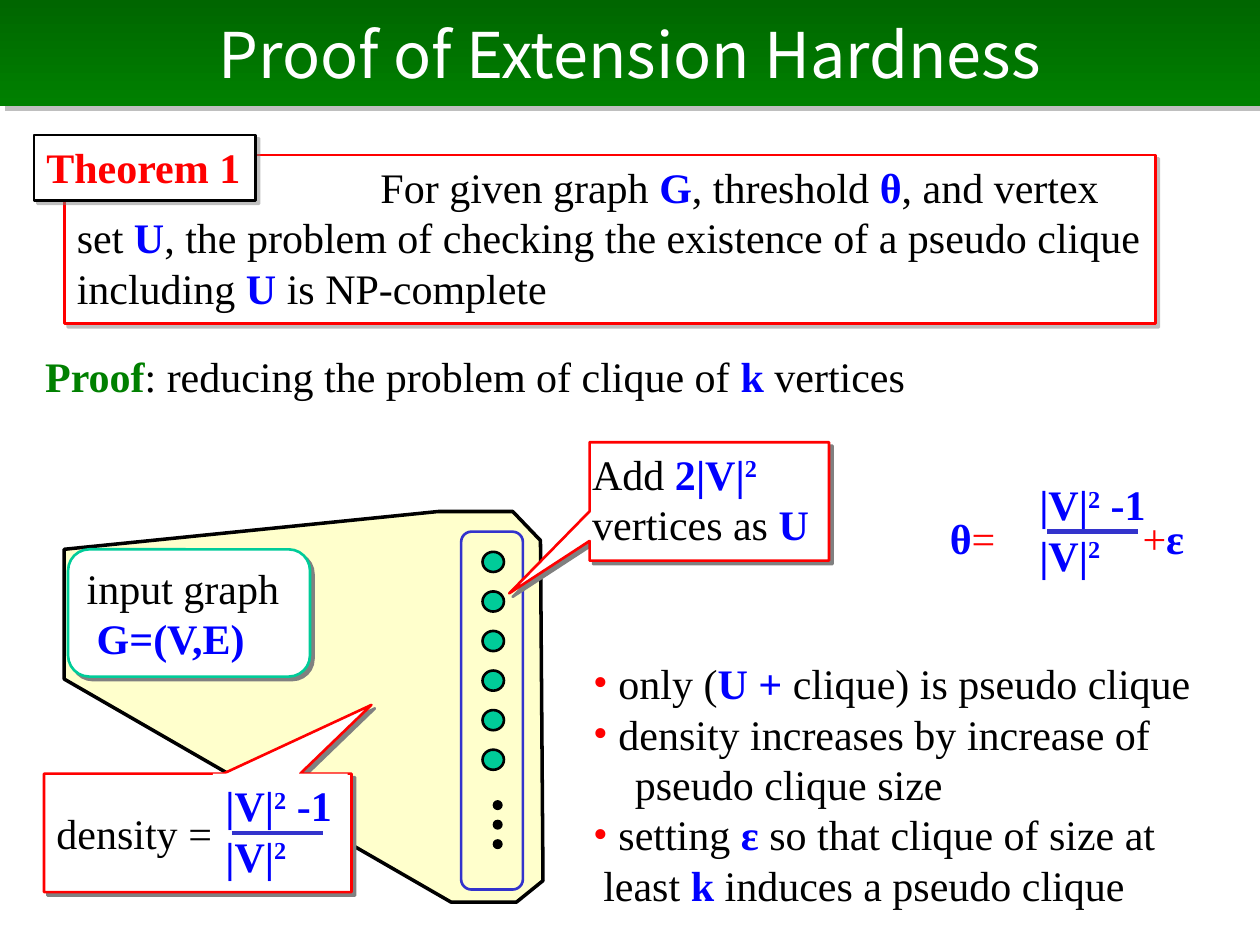
from lxml import etree
from pptx import Presentation
from pptx.dml.color import RGBColor
from pptx.enum import shapes, text
from pptx.oxml.ns import qn
from pptx.util import Inches, Pt

COLORS = {
    "white": "FFFFFF", "black": "000000", "red": "FF0000", "blue": "0000FF",
    "green": "008000", "dark green": "006600", "teal": "00CC99",
    "indigo": "3333CC", "yellow": "FFFF00", "gray": "808080",
}
# style name: colour, bold, superscript
STYLES = {
    "plain": ("black", False, False), "math": ("blue", True, False),
    "power": ("blue", True, True), "theorem": ("red", True, False),
    "sign": ("red", False, False), "proof": ("green", True, False),
}
SHAPE = shapes.MSO_SHAPE
TOP, MIDDLE = text.MSO_ANCHOR.TOP, text.MSO_ANCHOR.MIDDLE
FRACTION = [[("|V|", "math"), ("2", "power"), (" -1", "math")],
            [("|V|", "math"), ("2", "power")]]


def rgb(name):
    return RGBColor.from_string(COLORS[name])


def place(sp, box):
    sp.left, sp.top, sp.width, sp.height = (Inches(v) for v in box)


def add_shadow(sp, alpha, distance):
    effects = sp._element.spPr.find(qn("a:effectLst"))
    shadow = etree.SubElement(effects, qn("a:outerShdw"), blurRad="0",
                              dist=str(Pt(distance)), dir="2700000",
                              algn="ctr", rotWithShape="0")
    color = etree.SubElement(shadow, qn("a:srgbClr"), val=COLORS["gray"])
    etree.SubElement(color, qn("a:alpha"), val=str(alpha * 1000))


def paint(sp, fill=None, line=None, width=1.5, shadow=None):
    """Set fill, outline and shadow; shadow is the opacity in percent."""
    if fill:
        sp.fill.solid()
        sp.fill.fore_color.rgb = rgb(fill)
    else:
        sp.fill.background()
    if line:
        sp.line.color.rgb = rgb(line)
        sp.line.width = Pt(width)
    else:
        sp.line.fill.background()
    sp.shadow.inherit = False
    if shadow:
        add_shadow(sp, shadow, 2.8)


def add_box(s, kind, box, adjust=(), **look):
    sp = s.shapes.add_shape(kind, *(Inches(v) for v in box))
    for i, value in enumerate(adjust):
        sp.adjustments[i] = value
    paint(sp, **look)
    return sp


def write(sp, paragraphs, anchor=TOP, inset=0.1):
    """Fill a shape with paragraphs, each a list of (text, style) runs."""
    tf = sp.text_frame
    tf.word_wrap = True
    tf.auto_size = text.MSO_AUTO_SIZE.NONE
    tf.vertical_anchor = anchor
    tf.margin_left = tf.margin_right = Inches(inset)
    for i, runs in enumerate(paragraphs):
        p = tf.paragraphs[0] if i == 0 else tf.add_paragraph()
        p.alignment = text.PP_ALIGN.LEFT
        p.space_before = Pt(0)
        for words, style in runs:
            color, bold, raised = STYLES[style]
            r = p.add_run()
            r.text = words
            r.font.name = "Times New Roman"
            r.font.size = Pt(24)
            r.font.bold = bold
            r.font.color.rgb = rgb(color)
            if raised:
                r._r.get_or_add_rPr().set("baseline", "30000")
    return tf.paragraphs


def add_text(s, box, paragraphs):
    return write(s.shapes.add_textbox(*(Inches(v) for v in box)), paragraphs)


def indent(p, margin, first=0):
    pPr = p._p.get_or_add_pPr()
    pPr.set("marL", str(Inches(margin)))
    pPr.set("indent", str(Inches(first)))
    return pPr


def add_bullet(p):
    pPr = indent(p, 0.2, -0.2)
    color = etree.SubElement(pPr, qn("a:buClr"))
    etree.SubElement(color, qn("a:srgbClr"), val=COLORS["red"])
    etree.SubElement(pPr, qn("a:buFont"), typeface="Times New Roman")
    etree.SubElement(pPr, qn("a:buChar"), char="•")


def add_rule(s, x, y, length):
    line = s.shapes.add_connector(shapes.MSO_CONNECTOR.STRAIGHT, Inches(x),
                                  Inches(y), Inches(x + length), Inches(y))
    line.line.color.rgb = rgb("indigo")
    line.line.width = Pt(2.5)
    etree.SubElement(line._element.spPr, qn("a:effectLst"))


def add_title(s):
    sp = s.shapes.title
    place(sp, (0, 0, 10, 0.84))
    sp.fill.gradient()
    sp.fill.gradient_angle = 270
    for stop, color in zip(sp.fill.gradient_stops, ("dark green", "green")):
        stop.color.rgb = rgb(color)
    sp.shadow.inherit = False
    add_shadow(sp, 50, 4.2)
    tf = sp.text_frame
    tf.text = "Proof of Extension Hardness"
    tf.vertical_anchor = MIDDLE
    p = tf.paragraphs[0]
    p.alignment = text.PP_ALIGN.CENTER
    font = p.runs[0].font
    font.name, font.size = "Noto Sans CJK JP", Pt(36)
    font.color.rgb = rgb("white")


def add_theorem(s):
    sp = s.placeholders[1]
    place(sp, (0.51, 1.23, 8.66, 1.34))
    paint(sp, "white", "red", shadow=50)
    statement = write(sp, [[
        ("For given graph ", "plain"), ("G", "math"), (", threshold ", "plain"),
        ("θ", "math"), (", and vertex set ", "plain"), ("U", "math"),
        (", the problem of checking the existence of a pseudo clique including ",
         "plain"),
        ("U", "math"), (" is NP-complete", "plain")]])
    indent(statement[0], 0, 2.41)
    label = add_box(s, SHAPE.RECTANGLE, (0.27, 1.07, 1.76, 0.52),
                    fill="white", line="black", shadow=50)
    write(label, [[("Theorem 1", "theorem")]])


def add_graph_outline(s):
    points = [(0.51, 5.39), (3.58, 7.16), (4.1, 7.16), (4.31, 6.99),
              (4.29, 4.29), (4.07, 4.06), (3.48, 4.06), (0.51, 4.36)]
    corners = [(Inches(x), Inches(y)) for x, y in points]
    builder = s.shapes.build_freeform(*corners[0])
    builder.add_line_segments(corners[1:], close=True)
    sp = builder.convert_to_shape()
    paint(sp, "yellow", "black", 2)
    color = sp._element.spPr.find(qn("a:solidFill"))[0]
    etree.SubElement(color, qn("a:alpha"), val="20000")


def add_added_vertices(s):
    add_box(s, SHAPE.ROUNDED_RECTANGLE, (3.66, 4.22, 0.49, 2.84), line="indigo")
    for i in range(6):
        add_box(s, SHAPE.OVAL, (3.83, 4.38 + 0.314 * i, 0.17, 0.16),
                fill="teal", line="black")
    for i in range(3):
        add_box(s, SHAPE.OVAL, (3.91, 6.35 + 0.155 * i, 0.08, 0.08), fill="black")


def add_fraction(s, x, y, rule_x, rule_y):
    sp = add_box(s, SHAPE.RECTANGLE, (x, y, 1.07, 0.91), fill="white")
    write(sp, FRACTION)
    add_rule(s, rule_x, rule_y, 0.72)


def add_threshold(s):
    add_fraction(s, 8.15, 3.75, 8.31, 4.22)
    add_text(s, (7.44, 4.02, 0.7, 0.51), [[("θ", "math"), ("=", "sign")]])
    add_text(s, (8.97, 4.02, 0.7, 0.51), [[("+", "sign"), ("ε", "math")]])


def add_conclusions(s):
    lines = add_text(s, (4.61, 5.17, 4.98, 2.12), [
        [("only (", "plain"), ("U +", "math"),
         (" clique) is pseudo clique", "plain")],
        [("density increases by increase of", "plain")],
        [("pseudo clique size", "plain")],
        [("setting ", "plain"), ("ε ", "math"),
         ("so that clique of size at", "plain")],
        [("least ", "plain"), ("k ", "math"),
         ("induces a pseudo clique", "plain")]])
    for i in (0, 1, 3):
        add_bullet(lines[i])
    indent(lines[2], 0.33)
    indent(lines[4], 0.08)


def main():
    prs = Presentation()
    prs.slide_width, prs.slide_height = Inches(10), Inches(7.5)
    s = prs.slides.add_slide(prs.slide_layouts[0])
    add_title(s)
    add_theorem(s)
    add_graph_outline(s)
    add_text(s, (0.26, 2.73, 7.08, 0.51),
             [[("Proof", "proof"), (": reducing the problem of clique of ", "plain"),
               ("k", "math"), (" vertices", "plain")]])
    graph = add_box(s, SHAPE.ROUNDED_RECTANGLE, (0.54, 4.36, 1.92, 1.01),
                    fill="white", line="teal", shadow=100)
    lines = write(graph, [[("input graph", "plain")], [("G=(V,E)", "math")]], MIDDLE)
    indent(lines[1], 0.08)
    add_added_vertices(s)
    callout = dict(fill="white", line="red", shadow=100)
    added = add_box(s, SHAPE.RECTANGULAR_CALLOUT, (4.68, 3.51, 1.9, 0.94),
                    (-0.836, 0.776), **callout)
    write(added, [[("Add ", "plain"), ("2|V|", "math"), ("2", "power"),
                   (" vertices as ", "plain"), ("U", "math")]], inset=0.02)
    density = add_box(s, SHAPE.RECTANGULAR_CALLOUT, (0.35, 6.14, 2.44, 0.94),
                      (0.565, -1.08), **callout)
    write(density, [[("density =", "plain")]], MIDDLE)
    add_fraction(s, 1.69, 6.14, 1.84, 6.61)
    add_conclusions(s)
    add_threshold(s)
    prs.save("out.pptx")


if __name__ == "__main__":
    main()
